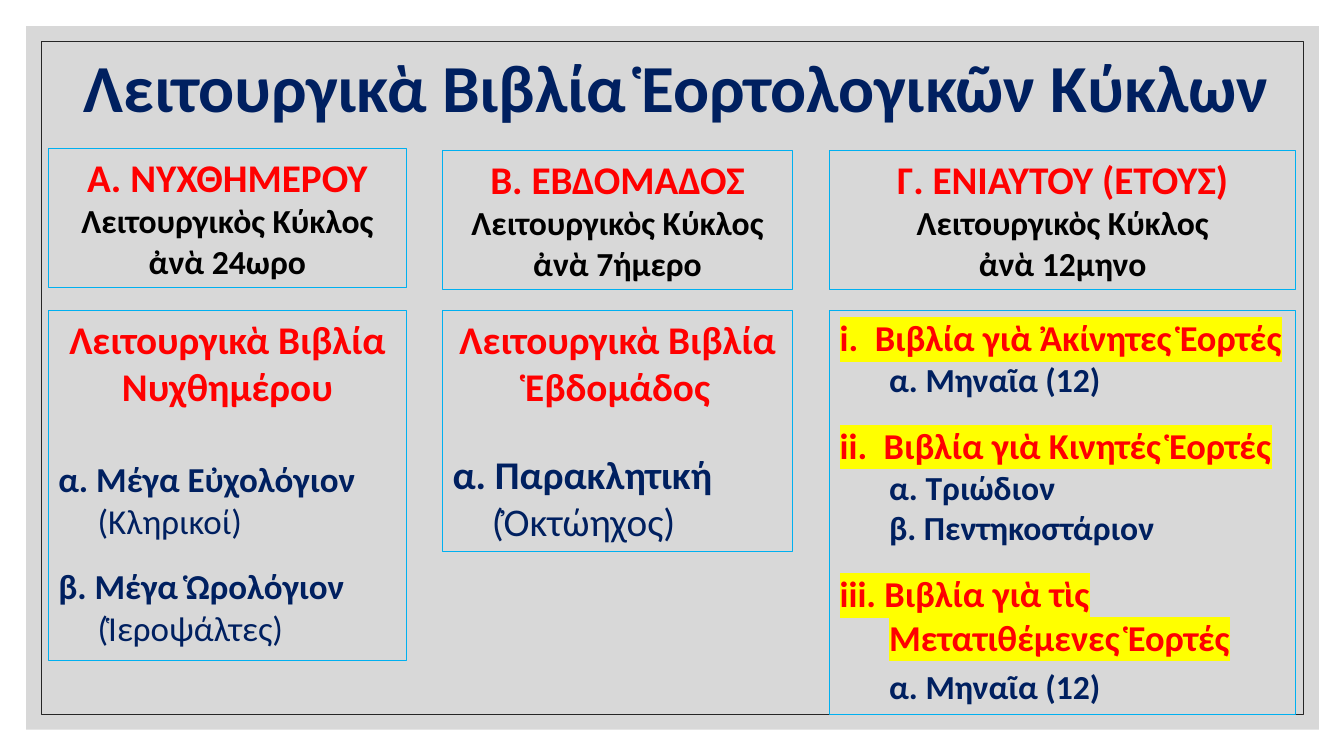
from dataclasses import dataclass

from lxml import etree
from pptx import Presentation
from pptx import util as u
from pptx.dml.color import RGBColor
from pptx.enum import shapes, text
from pptx.oxml.ns import qn

FONT = "Calibri"
HEX = {"panel": "BFBFBF", "frame": "262626", "edge": "00B0F0", "navy": "002060",
       "red": "FF0000", "black": "000000", "mark": "FFFF00"}


@dataclass(frozen=True)
class Line:
    """One paragraph: gap is points above, left and hang are inches."""
    words: str
    size: int
    color: str = "navy"
    bold: bool = True
    center: bool = False
    gap: int = 0
    left: float = 0
    hang: float = 0
    mark: bool = False
    tail: str = ""


@dataclass(frozen=True)
class Box:
    left: float
    top: float
    width: float
    height: float
    lines: tuple[Line, ...]


def rgb(name: str) -> RGBColor:
    return RGBColor.from_string(HEX[name])


def head(name: str, span: str) -> tuple[Line, ...]:
    """Heading of a cycle, with the time it spans."""
    return (Line(name, 28, "red", center=True),
            Line("Λειτουργικὸς Κύκλος", 24, "black", center=True),
            Line(span, 24, "black", center=True))


def group(words: str, gap: int = 0, hang: float = 0) -> Line:
    """Highlighted heading of a group of books."""
    return Line(words, 26, "red", gap=gap, left=hang, hang=hang, mark=True)


def book(words: str, gap: int = 0) -> Line:
    return Line(words, 24, gap=gap, left=0.49)


def note(words: str) -> Line:
    return Line(words, 25, bold=False, left=0.39)


# Each column: left, width, top and lines of its heading, height and lines of its books
COLS = (
    (0.48, 3.55, 1.47, head("Α. ΝΥΧΘΗΜΕΡΟΥ", "ἀνὰ 24ωρο"), 3.47, (
        Line("Λειτουργικὰ Βιβλία Νυχθημέρου", 28, "red", center=True),
        Line("α. Μέγα Εὐχολόγιον", 25, gap=34),
        note("(Κληρικοί)"),
        Line("β. Μέγα Ὡρολόγιον", 25, gap=17),
        note("(Ἱεροψάλτες)"))),
    (4.39, 3.47, 1.49, head("Β. ΕΒΔΟΜΑΔΟΣ", "ἀνὰ 7ήμερο"), 2.39, (
        Line("Λειτουργικὰ Βιβλία Ἑβδομάδος", 28, "red", center=True),
        Line("α. Παρακλητική ", 28, gap=29, left=0.39, hang=0.39,
             tail="(Ὀκτώηχος)"))),
    (8.23, 4.62, 1.49, head("Γ. ΕΝΙΑΥΤΟΥ (ΕΤΟΥΣ)", "ἀνὰ 12μηνο"), 4.01, (
        group("i.  Βιβλία γιὰ Ἀκίνητες Ἑορτές"),
        book("α. Μηναῖα (12)"),
        group("ii.  Βιβλία γιὰ Κινητές Ἑορτές", 17),
        book("α. Τριώδιον"),
        book("β. Πεντηκοστάριον"),
        group("iii. Βιβλία γιὰ τὶς Μετατιθέμενες Ἑορτές", 17, 0.49),
        book("α. Μηναῖα (12)", 5))),
)


def add_rect(slide, left: float, top: float, width: float, height: float):
    rect = slide.shapes.add_shape(
        shapes.MSO_SHAPE.RECTANGLE, u.Inches(left), u.Inches(top),
        u.Inches(width), u.Inches(height))
    rect.shadow.inherit = False
    rect.fill.background()
    return rect


def set_edge(rect, color: str, width: float) -> None:
    rect.line.color.rgb = rgb(color)
    rect.line.width = u.Pt(width)


def add_mark(run) -> None:
    """Highlight a run."""
    mark = etree.SubElement(run.font._element, qn("a:highlight"))
    etree.SubElement(mark, qn("a:srgbClr"), val=HEX["mark"])


def write_line(para, line: Line) -> None:
    para.alignment = text.PP_ALIGN.CENTER if line.center else text.PP_ALIGN.LEFT
    para.space_before = u.Pt(line.gap)
    font = para.font
    font.name, font.size = FONT, u.Pt(line.size)
    font.color.rgb = rgb(line.color)
    props = para._p.get_or_add_pPr()
    props.set("marL", str(u.Inches(line.left)))
    props.set("indent", str(u.Inches(-line.hang)))
    run = para.add_run()
    run.text = line.words
    if line.tail:
        run.font.bold = line.bold
        tail = para.add_run()
        tail.text = line.tail
        tail.font.bold = False
    else:
        font.bold = line.bold
    if line.mark:
        add_mark(run)


def draw_box(slide, box: Box) -> None:
    rect = add_rect(slide, box.left, box.top, box.width, box.height)
    set_edge(rect, "edge", 0.75)
    frame = rect.text_frame
    frame.word_wrap = True
    frame.auto_size = text.MSO_AUTO_SIZE.SHAPE_TO_FIT_TEXT
    frame.vertical_anchor = text.MSO_ANCHOR.TOP
    for i, line in enumerate(box.lines):
        write_line(frame.add_paragraph() if i else frame.paragraphs[0], line)


def draw_back(slide) -> None:
    panel = add_rect(slide, 0.26, 0.26, 12.82, 6.98)
    panel.fill.solid()
    panel.fill.fore_color.rgb = rgb("panel")
    panel.line.fill.background()
    tone = panel.element.spPr.find(qn("a:solidFill"))[0]
    etree.SubElement(tone, qn("a:alpha"), val="60000")
    set_edge(add_rect(slide, 0.41, 0.41, 12.52, 6.68), "frame", 0.5)


def draw_title(slide) -> None:
    """Fill the title and lift it above the panel."""
    title = slide.shapes.title
    title.left, title.top = u.Inches(0.48), u.Inches(0.42)
    title.width, title.height = u.Inches(12.46), u.Inches(0.96)
    frame = title.text_frame
    frame.word_wrap = True
    frame.auto_size = text.MSO_AUTO_SIZE.NONE
    frame.vertical_anchor = text.MSO_ANCHOR.MIDDLE
    para = frame.paragraphs[0]
    para.line_spacing = 0.9
    write_line(para, Line("Λειτουργικὰ Βιβλία Ἑορτολογικῶν Κύκλων", 48, center=True))
    title.element.getparent().append(title.element)


def main() -> None:
    deck = Presentation()
    deck.slide_width, deck.slide_height = u.Inches(13.33), u.Inches(7.5)
    slide = deck.slides.add_slide(deck.slide_layouts[5])
    draw_back(slide)
    draw_title(slide)
    for left, width, top, lines, _, _ in COLS:
        draw_box(slide, Box(left, top, width, 1.38, lines))
    for left, width, _, _, height, lines in COLS:
        draw_box(slide, Box(left, 3.08, width, height, lines))
    deck.save("out.pptx")


if __name__ == "__main__":
    main()
